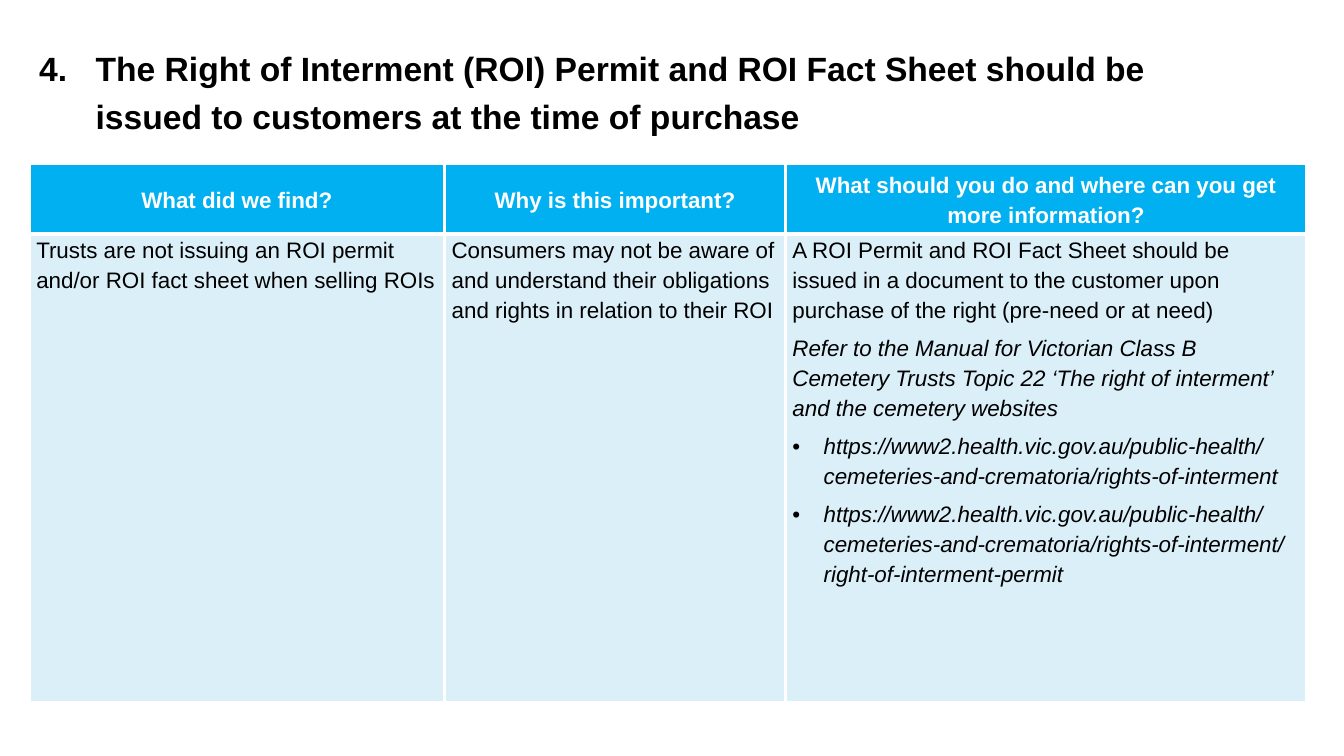
"""Build the slide on issuing the ROI permit and fact sheet."""
from dataclasses import dataclass

from lxml import etree
from pptx import Presentation
from pptx.dml.color import RGBColor
from pptx.enum import text
from pptx.oxml import ns
from pptx.util import Inches, Pt


@dataclass(frozen=True)
class Theme:
    font: str = "Arial"
    title_size: int = 24
    table_size: int = 16
    border_width: int = 3
    black: str = "000000"
    white: str = "FFFFFF"
    header_fill: str = "00B0F0"
    body_fill: str = "DBEFF9"


@dataclass(frozen=True)
class Para:
    words: str
    size: int
    color: str
    bold: bool = False
    italic: bool = False
    align: text.PP_ALIGN = text.PP_ALIGN.LEFT
    spacing: int = 3
    hang: float = 0
    bullet: str = ""
    start: int = 0


@dataclass(frozen=True)
class Column:
    width: float
    heading: str
    body: tuple[Para, ...]


THEME = Theme()


def body(words: str, italic: bool = False) -> Para:
    return Para(words, THEME.table_size, THEME.black, italic=italic)


def link(words: str) -> Para:
    return Para(words, THEME.table_size, THEME.black, italic=True, hang=0.31, bullet="•")


def heading(words: str) -> Para:
    return Para(words, THEME.table_size, THEME.white, bold=True, align=text.PP_ALIGN.CENTER)


TITLE = Para(
    "The Right of Interment (ROI) Permit and ROI Fact Sheet should be "
    "issued to customers at the time of purchase",
    THEME.title_size, THEME.black, bold=True, spacing=2, hang=0.56, start=4)

SITE = "https://www2.health.vic.gov.au/public-health/cemeteries-and-crematoria/rights-of-interment"
COLUMNS = (
    Column(4.12, "What did we find?", (
        body("Trusts are not issuing an ROI permit and/or ROI fact sheet when selling ROIs"),)),
    Column(3.38, "Why is this important?", (
        body("Consumers may not be aware of and understand their obligations "
             "and rights in relation to their ROI"),)),
    Column(5.17, "What should you do and where can you get more information?", (
        body("A ROI Permit and ROI Fact Sheet should be issued in a document to the "
             "customer upon purchase of the right (pre-need or at need)"),
        body("Refer to the Manual for Victorian Class B Cemetery Trusts Topic 22 "
             "‘The right of interment’ and the cemetery websites", italic=True),
        link(SITE),
        link(SITE + "/right-of-interment-permit"))),
)
ROW_HEIGHTS = (0.7, 4.65)


def add_marker(p, para: Para) -> None:
    """Give a paragraph its hanging indent and its bullet or number."""
    pPr = p._p.get_or_add_pPr()
    pPr.set("marL", str(Inches(para.hang)))
    pPr.set("indent", str(-Inches(para.hang)))
    if para.start:
        etree.SubElement(pPr, ns.qn("a:buAutoNum"), type="arabicPeriod", startAt=str(para.start))
    else:
        etree.SubElement(pPr, ns.qn("a:buFont"), typeface=THEME.font)
        etree.SubElement(pPr, ns.qn("a:buChar"), char=para.bullet)


def write(tf, paras: tuple[Para, ...]) -> None:
    """Fill a text frame with formatted paragraphs."""
    tf.word_wrap = True
    for i, para in enumerate(paras):
        p = tf.add_paragraph() if i else tf.paragraphs[0]
        p.text = para.words
        if para.hang:
            add_marker(p, para)
        p.alignment = para.align
        p.line_spacing = 1.2
        p.space_before = Pt(para.spacing if i else 0)
        p.space_after = Pt(para.spacing)
        for r in p.runs:
            r.font.name = THEME.font
            r.font.size = Pt(para.size)
            r.font.bold = para.bold
            r.font.italic = para.italic
            r.font.color.rgb = RGBColor.from_string(para.color)


def add_borders(cell) -> None:
    """Draw the four borders of a cell."""
    tcPr = cell._tc.get_or_add_tcPr()
    for side in ("lnL", "lnR", "lnT", "lnB"):
        ln = etree.SubElement(tcPr, ns.qn(f"a:{side}"), w=str(Pt(THEME.border_width)))
        fill = etree.SubElement(ln, ns.qn("a:solidFill"))
        etree.SubElement(fill, ns.qn("a:srgbClr"), val=THEME.white)


def fill_cell(cell, paras: tuple[Para, ...], fill: str, anchor: text.MSO_ANCHOR) -> None:
    """Set the text, margins, borders and fill of a cell."""
    cell.margin_left = cell.margin_right = Inches(0.07)
    cell.margin_top = cell.margin_bottom = 0
    cell.vertical_anchor = anchor
    add_borders(cell)
    cell.fill.solid()
    cell.fill.fore_color.rgb = RGBColor.from_string(fill)
    write(cell.text_frame, paras)


def add_title(slide) -> None:
    """Add the numbered title."""
    sp = slide.shapes.add_textbox(Inches(0.29), Inches(0.36), Inches(11.21), Inches(1.03))
    tf = sp.text_frame
    tf.vertical_anchor = text.MSO_ANCHOR.MIDDLE
    write(tf, (TITLE,))


def add_findings(slide) -> None:
    """Add the table of findings."""
    width = sum(column.width for column in COLUMNS)
    table = slide.shapes.add_table(
        len(ROW_HEIGHTS), len(COLUMNS), Inches(0.29), Inches(1.62),
        Inches(width), Inches(sum(ROW_HEIGHTS))).table
    for row, height in zip(table.rows, ROW_HEIGHTS):
        row.height = Inches(height)
    for i, column in enumerate(COLUMNS):
        table.columns[i].width = Inches(column.width)
        fill_cell(table.cell(0, i), (heading(column.heading),),
                  THEME.header_fill, text.MSO_ANCHOR.MIDDLE)
        fill_cell(table.cell(1, i), column.body, THEME.body_fill, text.MSO_ANCHOR.TOP)


def main() -> None:
    """Build and save the presentation."""
    prs = Presentation()
    prs.slide_width, prs.slide_height = Inches(13.33), Inches(7.5)
    slide = prs.slides.add_slide(prs.slide_layouts[6])
    add_title(slide)
    add_findings(slide)
    prs.save("out.pptx")


if __name__ == "__main__":
    main()
